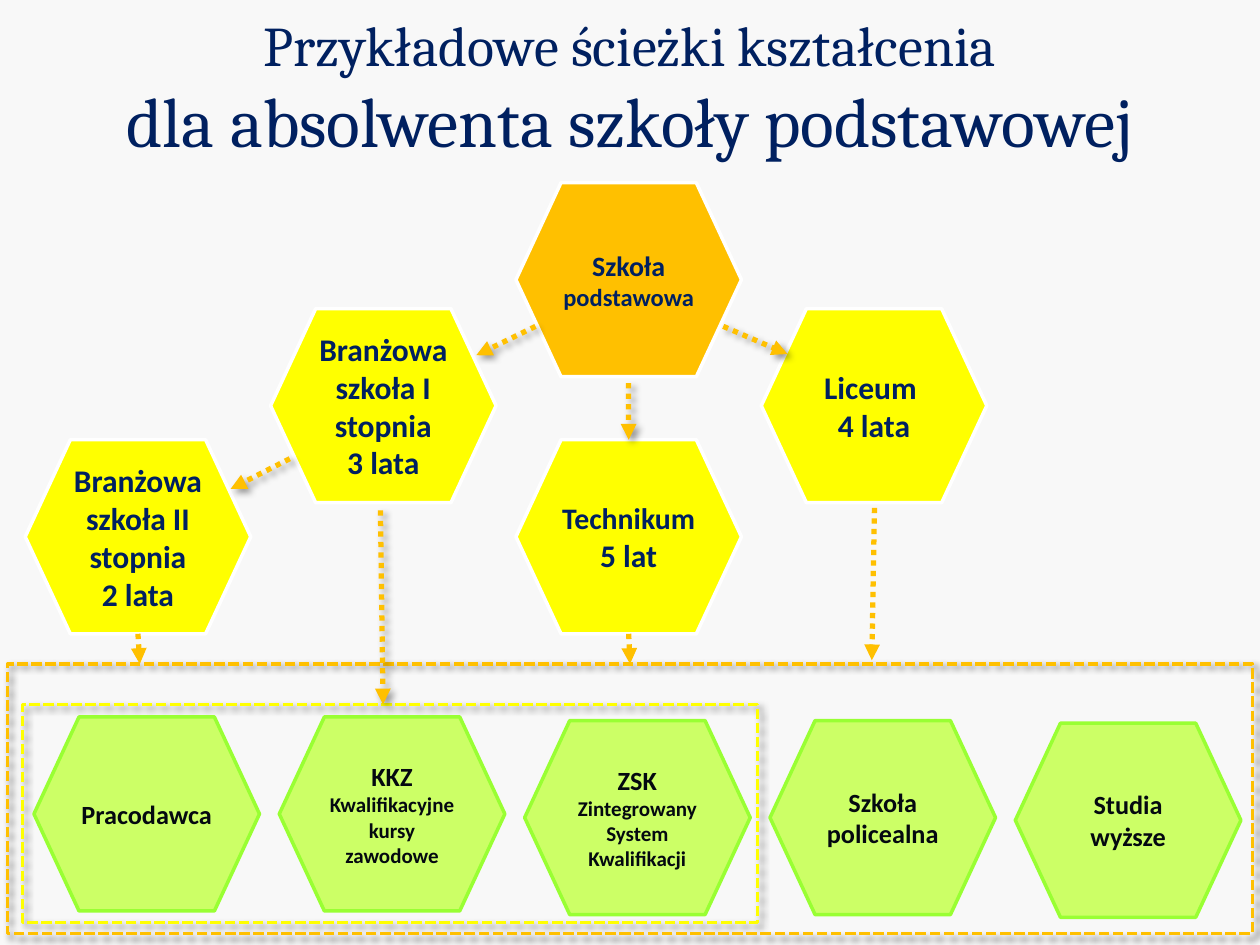
import pptx
import pptx.util
import pptx.dml.color
import pptx.enum.dml
import pptx.enum.shapes
import pptx.enum.text
import pptx.oxml
import pptx.oxml.ns

Pt = pptx.util.Pt
SHAPE = pptx.enum.shapes.MSO_SHAPE
DASH = pptx.enum.dml.MSO_LINE
CENTER = pptx.enum.text.PP_ALIGN.CENTER

COLORS = {
    "background": "F8F8F8", "navy": "002060", "ink": "040910", "white": "FFFFFF",
    "orange": "FFC000", "yellow": "FFFF00", "lime": "CCFF66", "green": "99FF33",
}

# Content: paragraphs are lists of (text, size) runs
TITLE = [[("Przykładowe ścieżki kształcenia", 32)],
         [("dla absolwenta szkoły podstawowej", 40)]]

# name: (column, top, fill, paragraphs)
SCHOOLS = {
    "trade2": (0, 251.3, "yellow", [[("Branżowa szkoła II stopnia", 18)], [("2 lata", 18)]]),
    "primary": (2, 104.4, "orange", [[("Szkoła ", 16), ("podstawowa", 14)]]),
    "trade1": (1, 176.4, "yellow", [[("Branżowa szkoła I stopnia", 18)], [("3 lata", 18)]]),
    "technical": (2, 251.3, "yellow", [[("Technikum", 17)], [("5 lat", 18)]]),
    "general": (3, 176.4, "yellow", [[("Liceum ", 18)], [("4 lata", 18)]]),
}

# (top, paragraphs), one per column
OUTCOMES = [
    (409.7, [[("Pracodawca", 15)]]),
    (409.7, [[("KKZ", 15)], [("Kwalifikacyjne kursy zawodowe", 12)]]),
    (411.8, [[("ZSK ", 15), ("Zintegrowany System Kwalifikacji", 12)]]),
    (411.8, [[("Szkoła policealna", 15)]]),
    (413.3, [[("Studia wyższe", 15)]]),
]

# name: (left, top, width, height, line colour)
FRAMES = {
    "courses": (13, 402.5, 419.8, 124.6, "yellow"),
    "all": (4.3, 379.4, 711.4, 154.1, "orange"),
}

# (start, end, shadow, joined start, joined end); a join is (name, side)
ARROWS = [
    ((306, 186.5), (272.2, 203), True, None, None),
    ((165.6, 262.1), (131.8, 279.4), True, None, None),
    ((359.2, 218.9), (359.2, 251.3), True, None, ("technical", 0)),
    ((413.3, 186.5), (450, 202.3), True, None, None),
    ((79.2, 362.2), (79.9, 379.4), False, ("trade2", 2), None),
    ((359.2, 362.2), (360, 379.4), False, ("technical", 2), ("all", 0)),
    ((499.7, 290.2), (498.2, 377.3), False, None, None),
    ((217.4, 291.6), (218.9, 402.5), True, None, None),
]

HEX_W, HEX_H, COLUMN_STEP = 128.9, 110.9, 140.2
SCHOOLS_LEFT, OUTCOMES_LEFT = 14.4, 19.4


def rgb(name):
    return pptx.dml.color.RGBColor.from_string(COLORS[name])


def set_line(s, color, width, dash=None):
    s.line.color.rgb = rgb(color)
    s.line.width = Pt(width)
    if dash is not None:
        s.line.dash_style = dash


def set_effect(s, shadow):
    """Replace the theme effect with a soft shadow, or with none."""
    inner = ('<a:outerShdw blurRad="50800" dist="38100" dir="2700000" algn="tl" rotWithShape="0">'
             '<a:srgbClr val="000000"><a:alpha val="40000"/></a:srgbClr></a:outerShdw>')
    s._element.spPr.append(pptx.oxml.parse_xml(
        f'<a:effectLst {pptx.oxml.ns.nsdecls("a")}>{inner if shadow else ""}</a:effectLst>'))


def write(tf, paragraphs, font, color, bold=False):
    tf.word_wrap = True
    for i, runs in enumerate(paragraphs):
        p = tf.add_paragraph() if i else tf.paragraphs[0]
        p.alignment = CENTER
        for text, size in runs:
            r = p.add_run()
            r.text = text
            r.font.name, r.font.size, r.font.bold = font, Pt(size), bold
            r.font.color.rgb = rgb(color)


def add_hexagon(slide, left, top, fill, line, paragraphs, color):
    s = slide.shapes.add_shape(SHAPE.FLOWCHART_PREPARATION,
                               Pt(left), Pt(top), Pt(HEX_W), Pt(HEX_H))
    s.shadow.inherit = False
    s.fill.solid()
    s.fill.fore_color.rgb = rgb(fill)
    set_line(s, line, 2)
    tf = s.text_frame
    tf.margin_left = tf.margin_right = tf.margin_top = tf.margin_bottom = 0
    tf.vertical_anchor = pptx.enum.text.MSO_ANCHOR.MIDDLE
    write(tf, paragraphs, "Calibri", color, bold=True)
    return s


def add_frame(slide, left, top, width, height, color):
    s = slide.shapes.add_shape(SHAPE.RECTANGLE, Pt(left), Pt(top), Pt(width), Pt(height))
    s.fill.background()
    set_line(s, color, 2, DASH.SQUARE_DOT)
    # Square dot is the preset sysDot; the frames use the longer sysDash
    s.line._ln.find(pptx.oxml.ns.qn("a:prstDash")).set("val", "sysDash")
    set_effect(s, True)
    return s


def add_arrow(slide, start, end, shadow):
    s = slide.shapes.add_connector(pptx.enum.shapes.MSO_CONNECTOR.STRAIGHT,
                                   *(Pt(v) for v in start + end))
    set_line(s, "orange", 3, DASH.ROUND_DOT)
    ln = s.line._ln
    ln.find(pptx.oxml.ns.qn("a:prstDash")).set("val", "sysDot")
    ln.append(pptx.oxml.parse_xml(
        f'<a:tailEnd {pptx.oxml.ns.nsdecls("a")} type="triangle"/>'))
    set_effect(s, shadow)
    return s


def main():
    prs = pptx.Presentation()
    prs.slide_width, prs.slide_height = Pt(720), Pt(540)
    slide = prs.slides.add_slide(prs.slide_layouts[6])
    slide.background.fill.solid()
    slide.background.fill.fore_color.rgb = rgb("background")

    # Title
    box = slide.shapes.add_textbox(Pt(36), Pt(2.2), Pt(648), Pt(86.4))
    write(box.text_frame, TITLE, "Cambria", "navy")

    # Frames and schools, kept by name for the arrows
    nodes = {name: add_frame(slide, *frame) for name, frame in FRAMES.items()}
    for name, (column, top, fill, paragraphs) in SCHOOLS.items():
        nodes[name] = add_hexagon(slide, SCHOOLS_LEFT + column * COLUMN_STEP, top,
                                  fill, "white", paragraphs, "navy")

    # Arrows
    for start, end, shadow, source, target in ARROWS:
        arrow = add_arrow(slide, start, end, shadow)
        if source:
            arrow.begin_connect(nodes[source[0]], source[1])
        if target:
            arrow.end_connect(nodes[target[0]], target[1])

    # Outcomes
    for column, (top, paragraphs) in enumerate(OUTCOMES):
        add_hexagon(slide, OUTCOMES_LEFT + column * COLUMN_STEP, top,
                    "lime", "green", paragraphs, "ink")

    prs.save("out.pptx")


if __name__ == "__main__":
    main()
